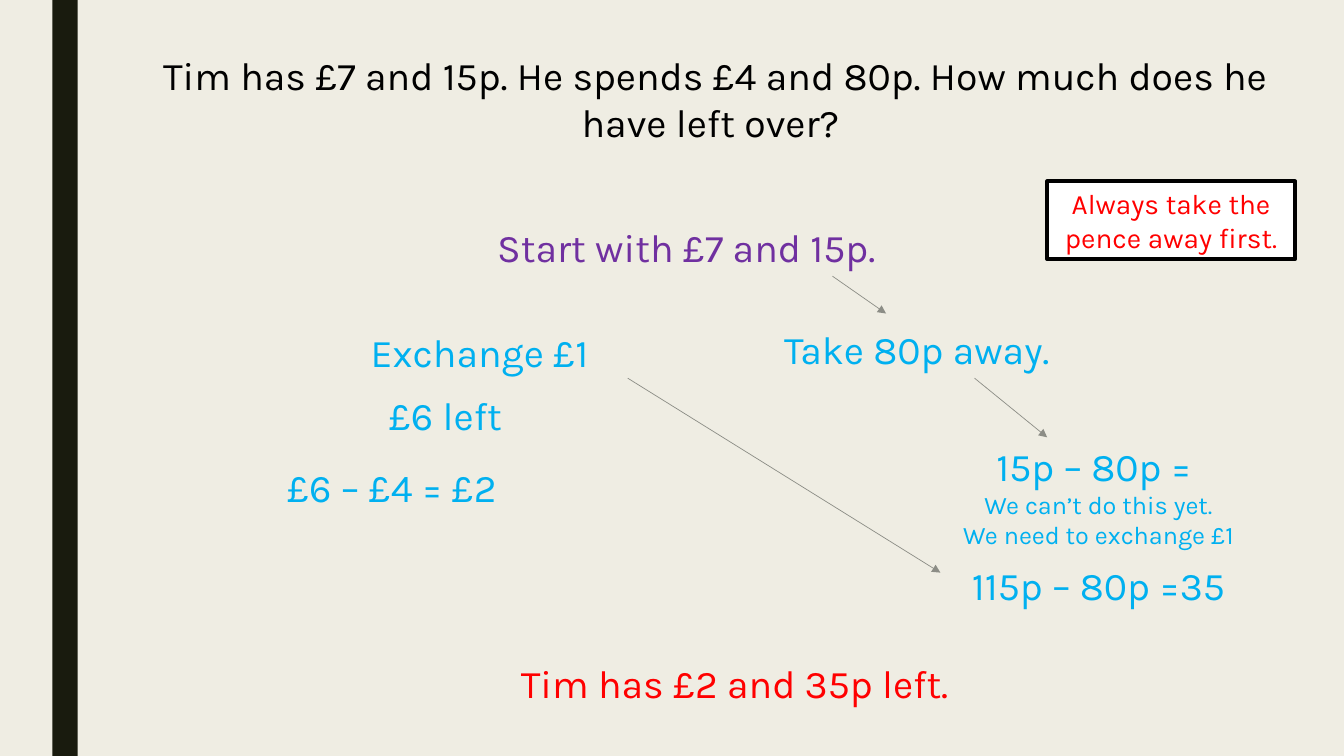
from lxml import etree
from pptx import Presentation
from pptx.dml.color import RGBColor
from pptx.enum.shapes import MSO_CONNECTOR, MSO_SHAPE
from pptx.enum.text import MSO_ANCHOR, MSO_AUTO_SIZE, PP_ALIGN
from pptx.oxml.ns import qn
from pptx.util import Cm, Pt

CREAM = RGBColor(0xEF, 0xED, 0xE3)
DARK = RGBColor(0x19, 0x1B, 0x0E)
BLACK = RGBColor(0, 0, 0)
WHITE = RGBColor(0xFF, 0xFF, 0xFF)
GREY = RGBColor(0x8C, 0x8D, 0x86)
PURPLE = RGBColor(0x70, 0x30, 0xA0)
BLUE = RGBColor(0x00, 0xB0, 0xF0)
RED = RGBColor(0xFF, 0, 0)


class LessonSlide:
    """Holds the lesson style and the current slide."""

    FONT = "Karla"
    SIZE = 28
    LINE_HEIGHT = 1.45
    FRAME = {"word_wrap": True, "auto_size": MSO_AUTO_SIZE.SHAPE_TO_FIT_TEXT}

    def __init__(self, deck):
        self.slide = deck.slides.add_slide(deck.slide_layouts[5])
        self.shapes = self.slide.shapes
        background = self.slide.background.fill
        background.solid()
        background.fore_color.rgb = CREAM

    def fill_text(self, shape, lines, color, anchor=MSO_ANCHOR.TOP):
        """Fill a shape with centred (text, size) lines."""
        frame = shape.text_frame
        for name, value in {**self.FRAME, "vertical_anchor": anchor}.items():
            setattr(frame, name, value)
        for index, (text, size) in enumerate(lines):
            paragraph = frame.add_paragraph() if index else frame.paragraphs[0]
            paragraph.alignment = PP_ALIGN.CENTER
            run = paragraph.add_run()
            run.text = text
            for name, value in {"name": self.FONT, "size": Pt(size)}.items():
                setattr(run.font, name, value)
            run.font.color.rgb = color

    def title(self, text, left, top, width, height):
        heading = self.shapes.title
        place = {"left": left, "top": top, "width": width, "height": height}
        for name, value in place.items():
            setattr(heading, name, Cm(value))
        self.fill_text(heading, [(text, self.SIZE)], BLACK)

    def step(self, text, left, top, width, color=BLUE, notes=(), height=LINE_HEIGHT):
        box = self.shapes.add_textbox(Cm(left), Cm(top), Cm(width), Cm(height))
        self.fill_text(box, [(text, self.SIZE), *((note, 18) for note in notes)], color)

    def panel(self, left, top, width, height, fill, border=None):
        box = self.shapes.add_shape(
            MSO_SHAPE.RECTANGLE, Cm(left), Cm(top), Cm(width), Cm(height))
        box.shadow.inherit = False
        box.fill.solid()
        box.fill.fore_color.rgb = fill
        if border is None:
            box.line.fill.background()
        else:
            box.line.color.rgb = border
            box.line.width = Pt(2.75)
        return box

    def arrow(self, *ends):
        link = self.shapes.add_connector(MSO_CONNECTOR.STRAIGHT, *map(Cm, ends))
        link.line.color.rgb = GREY
        link.line.width = Pt(0.5)
        properties = link._element.spPr
        etree.SubElement(properties.find(qn("a:ln")), qn("a:tailEnd"), type="triangle")
        etree.SubElement(properties, qn("a:effectLst"))


def main():
    deck = Presentation()
    deck.slide_width, deck.slide_height = Cm(33.87), Cm(19.05)
    lesson = LessonSlide(deck)

    # Side bar and question
    lesson.panel(1.32, 0, 0.64, 19.05, DARK)
    lesson.title("Tim has £7 and 15p. He spends £4 and 80p. "
                 "How much does he have left over? ", 3.43, 1.17, 29.18, 2.64)

    # Starting amount
    lesson.step("Start with £7 and 15p. ", 2.82, 5.51, 29.18, PURPLE)

    # Pence column
    pence_left, column_width = 23.09, 9.19
    lesson.step("Take 80p away.", 19.13, 8.08, 7.95)
    lesson.step("15p – 80p = ", pence_left, 11.02, column_width, height=3,
                notes=("We can’t do this yet.", "We need to exchange £1"))
    lesson.step("115p – 80p =35", pence_left, 14.02, column_width)

    # Pounds column
    for text, left, top in (("Exchange £1", 7.49, 8.15),
                            ("£6 left", 6.63, 9.73),
                            ("£6 – £4 = £2", 5.28, 11.56)):
        lesson.step(text, left, top, column_width)

    # Arrows between the steps
    for ends in ((20.98, 6.96, 22.33, 7.9),
                 (24.56, 9.53, 26.39, 11.02),
                 (15.82, 9.53, 23.7, 14.43)):
        lesson.arrow(*ends)

    # Reminder and answer
    reminder = lesson.panel(26.39, 4.57, 6.25, 1.96, WHITE, BLACK)
    lesson.fill_text(reminder, [("Always take the pence away first.", 20)], RED,
                     MSO_ANCHOR.MIDDLE)
    lesson.step("Tim has £2 and 35p left. ", 4.04, 16.48, 29.18, RED)

    deck.save("out.pptx")


if __name__ == "__main__":
    main()
